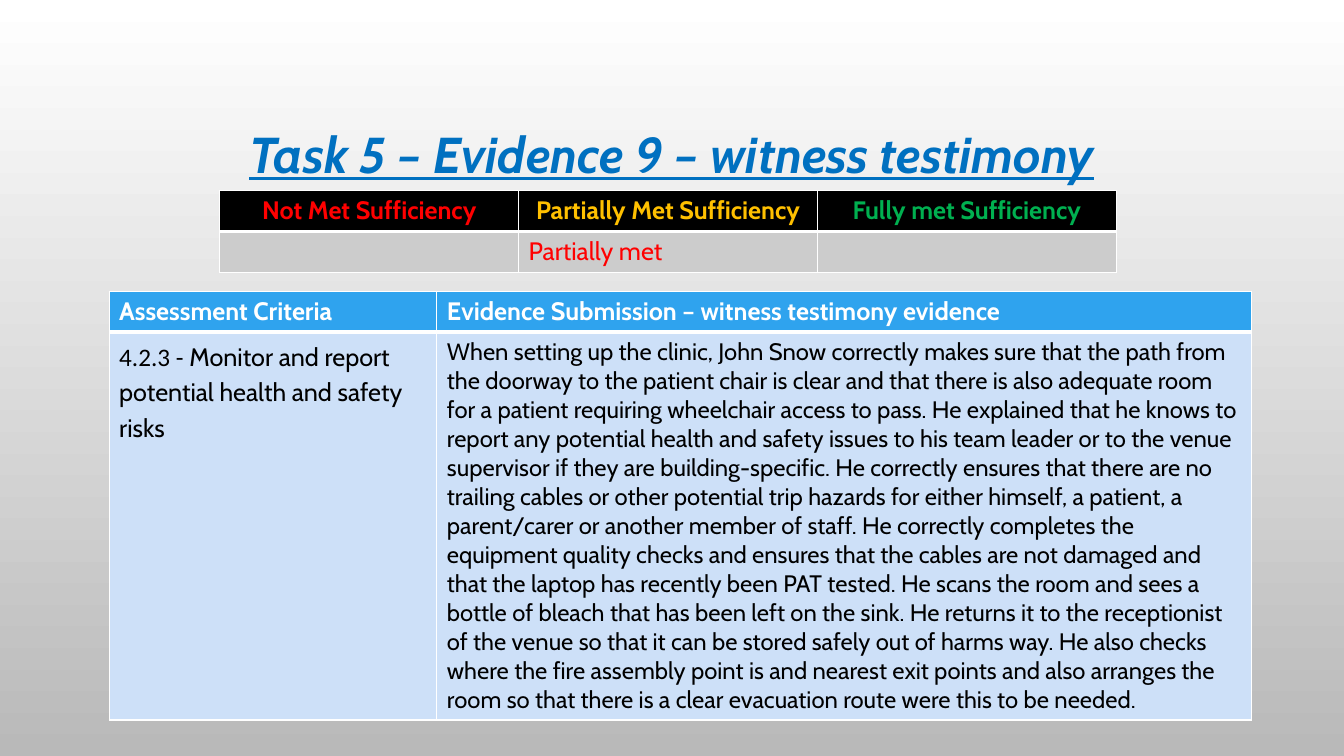
from dataclasses import dataclass

from lxml import etree
from pptx import Presentation
from pptx.dml.color import RGBColor
from pptx.enum.text import MSO_ANCHOR, PP_ALIGN
from pptx.oxml.ns import qn
from pptx.util import Cm, Pt

CENTER = PP_ALIGN.CENTER
LEFT = PP_ALIGN.LEFT
MIDDLE = MSO_ANCHOR.MIDDLE

WHITE = RGBColor(0xFF, 0xFF, 0xFF)
BLACK = RGBColor(0x00, 0x00, 0x00)
BACKDROP_GREY = RGBColor(0xB9, 0xB9, 0xB9)
CELL_GREY = RGBColor(0xCC, 0xCC, 0xCC)
TITLE_BLUE = RGBColor(0x00, 0x70, 0xC0)
HEADER_BLUE = RGBColor(0x2F, 0xA3, 0xEE)
PALE_BLUE = RGBColor(0xCD, 0xE0, 0xF8)
RED = RGBColor(0xFF, 0x00, 0x00)
AMBER = RGBColor(0xFF, 0xC0, 0x00)
GREEN = RGBColor(0x00, 0xB0, 0x50)

THIN, THICK = 1, 3
HEADER_HEIGHT = 1.03

TESTIMONY_SENTENCES = [
    "When setting up the clinic, John Snow correctly makes sure that the path from "
    "the doorway to the patient chair is clear and that there is also adequate room "
    "for a patient requiring wheelchair access to pass.",
    "He explained that he knows to report any potential health and safety issues to "
    "his team leader or to the venue supervisor if they are building-specific.",
    "He correctly ensures that there are no trailing cables or other potential trip "
    "hazards for either himself, a patient, a parent/carer or another member of staff.",
    "He correctly completes the equipment quality checks and ensures that the cables "
    "are not damaged and that the laptop has recently been PAT tested.",
    "He scans the room and sees a bottle of bleach that has been left on the sink.",
    "He returns it to the receptionist of the venue so that it can be stored safely "
    "out of harms way.",
    "He also checks where the fire assembly point is and nearest exit points and also "
    "arranges the room so that there is a clear evacuation route were this to be needed.",
]


@dataclass
class Entry:
    text: str
    color: RGBColor = BLACK
    size: float = 18
    bold: bool = False
    align: PP_ALIGN = LEFT
    prefix: str = ""
    line_spacing: float = 1.0
    space_after: float = 0


@dataclass
class Grid:
    left: float
    top: float
    widths: list[float]
    body_height: float
    header_fill: RGBColor
    body_fill: RGBColor
    rows: list[list[Entry]]


GRIDS = [
    Grid(5.54, 4.8, [7.53] * 3, HEADER_HEIGHT, BLACK, CELL_GREY, [
        [
            Entry("Not Met Sufficiency", RED, bold=True, align=CENTER),
            Entry("Partially Met Sufficiency", AMBER, bold=True, align=CENTER),
            Entry("Fully met Sufficiency", GREEN, bold=True, align=CENTER),
        ],
        [Entry(""), Entry("Partially met", RED), Entry("")],
    ]),
    Grid(2.75, 7.34, [8.26, 20.52], 9.6, HEADER_BLUE, PALE_BLUE, [
        [
            Entry("Assessment Criteria", WHITE, bold=True),
            Entry("Evidence Submission – witness testimony evidence", WHITE, bold=True),
        ],
        [
            Entry("Monitor and report potential health and safety risks",
                  prefix="4.2.3 - ", line_spacing=1.15, space_after=10),
            Entry(" ".join(TESTIMONY_SENTENCES), size=17),
        ],
    ]),
]


def add_span(para, text: str, *, color: RGBColor, size: float, bold: bool = False,
             italic: bool = False, underline: bool = False, font: str = "Cabin") -> None:
    span = para.add_run()
    span.text = text
    span.font.name = font
    span.font.size = Pt(size)
    span.font.bold = bold
    span.font.italic = italic
    span.font.underline = underline
    span.font.color.rgb = color


def set_borders(cell, top: float, bottom: float) -> None:
    properties = cell._tc.get_or_add_tcPr()
    edges = {"a:lnL": THIN, "a:lnR": THIN, "a:lnT": top, "a:lnB": bottom}
    for index, (tag, width) in enumerate(edges.items()):
        line = etree.Element(qn(tag), w=str(Pt(width)))
        fill = etree.SubElement(line, qn("a:solidFill"))
        etree.SubElement(fill, qn("a:srgbClr"), val=str(WHITE))
        properties.insert(index, line)


def fill_cell(cell, entry: Entry, fill: RGBColor) -> None:
    cell.fill.solid()
    cell.fill.fore_color.rgb = fill
    if not entry.text:
        return
    para = cell.text_frame.paragraphs[0]
    para.alignment = entry.align
    para.line_spacing = entry.line_spacing
    para.space_after = Pt(entry.space_after)
    if entry.prefix:
        add_span(para, entry.prefix, color=entry.color, size=entry.size, font="Calibri")
    add_span(para, entry.text, color=entry.color, size=entry.size, bold=entry.bold)


def draw_grid(page, grid: Grid) -> None:
    heights = [HEADER_HEIGHT, grid.body_height]
    table = page.shapes.add_table(
        len(heights), len(grid.widths), Cm(grid.left), Cm(grid.top),
        Cm(sum(grid.widths)), Cm(sum(heights))).table
    table.horz_banding = False
    for column, width in zip(table.columns, grid.widths):
        column.width = Cm(width)
    for row, height in zip(table.rows, heights):
        row.height = Cm(height)
    styles = [(grid.header_fill, THIN, THICK), (grid.body_fill, THICK, THIN)]
    for row, entries, (fill, top, bottom) in zip(table.rows, grid.rows, styles):
        for cell, entry in zip(row.cells, entries):
            fill_cell(cell, entry, fill)
            set_borders(cell, top, bottom)


def draw_background(page) -> None:
    fill = page.background.fill
    fill.gradient()
    fill.gradient_angle = 270
    for stop, position, color in zip(fill.gradient_stops, (0, 1), (WHITE, BACKDROP_GREY)):
        stop.position = position
        stop.color.rgb = color


def draw_title(page) -> None:
    box = page.shapes.title
    box.left, box.top, box.width, box.height = Cm(2.54), Cm(1.73), Cm(28.78), Cm(4.45)
    box.text_frame.vertical_anchor = MIDDLE
    box.text_frame.word_wrap = True
    para = box.text_frame.paragraphs[0]
    para.alignment = CENTER
    para.line_spacing = 0.9
    add_span(para, "Task 5 – Evidence 9 – witness testimony", color=TITLE_BLUE,
             size=36, bold=True, italic=True, underline=True)


def main() -> None:
    deck = Presentation()
    deck.slide_width, deck.slide_height = Cm(33.87), Cm(19.05)
    page = deck.slides.add_slide(deck.slide_layouts[5])
    draw_background(page)
    draw_title(page)
    for grid in GRIDS:
        draw_grid(page, grid)
    deck.save("out.pptx")


if __name__ == "__main__":
    main()
